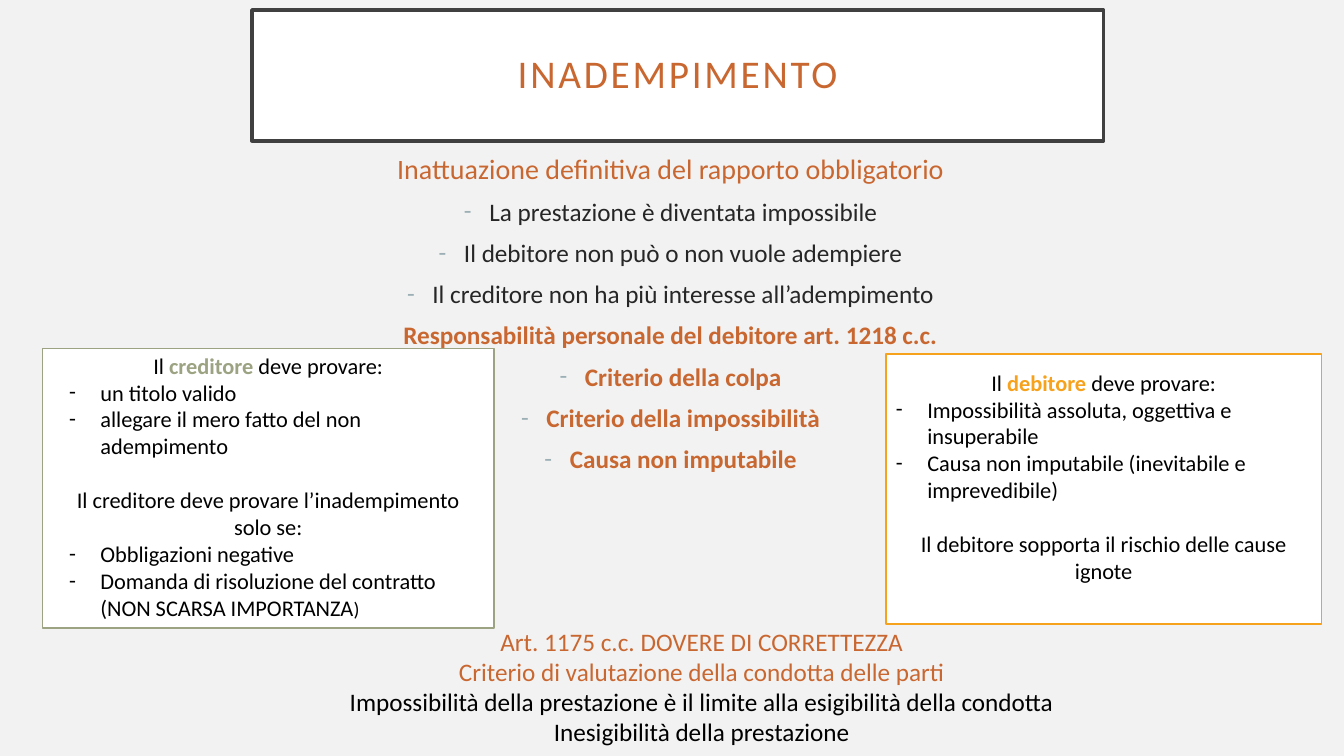
import lxml.etree
import pptx
import pptx.dml.color
import pptx.enum.shapes
import pptx.enum.text
import pptx.oxml.ns
import pptx.util

Cm = pptx.util.Cm
Pt = pptx.util.Pt
ALIGN = pptx.enum.text.PP_ALIGN

COLOURS = {
    "page": "F2F2F2", "white": "FFFFFF", "black": "000000", "frame": "404040",
    "rust": "C96731", "text": "262626", "dash": "9BAFB5",
    "creditor": "9CA383", "debtor": "F6A21D",
}
BODY_SPACING = {"line_spacing": 0.9, "space_before": Pt(10)}
CARD_SIZE = 16
BLANK_LINE = Pt(19.5)


def colour(name):
    """Return the named colour."""
    return pptx.dml.color.RGBColor.from_string(COLOURS[name])


def apply_formats(target, formats):
    """Set every attribute of the target from a dict."""
    for name, value in formats.items():
        setattr(target, name, value)


def place(shape, box):
    """Move and size a shape to a box in centimetres."""
    apply_formats(shape, dict(zip(("left", "top", "width", "height"), map(Cm, box))))


def paint(shape, fill, line, width):
    """Give a shape a solid fill and outline."""
    shape.fill.solid()
    shape.fill.fore_color.rgb = colour(fill)
    shape.line.color.rgb = colour(line)
    shape.line.width = Pt(width)


def prepare_frame(shape, anchor=pptx.enum.text.MSO_ANCHOR.TOP):
    """Return the wrapping text frame of a shape."""
    frame = shape.text_frame
    apply_formats(frame, {
        "word_wrap": True,
        "auto_size": pptx.enum.text.MSO_AUTO_SIZE.NONE,
        "vertical_anchor": anchor,
    })
    return frame


def set_bullet(para, indent, dash_colour):
    """Give a paragraph a hanging dash, or no bullet when the indent is zero."""
    properties = para._p.get_or_add_pPr()
    properties.set("marL", str(Cm(indent)))
    properties.set("indent", str(-Cm(indent)))
    tag = pptx.oxml.ns.qn
    if not indent:
        lxml.etree.SubElement(properties, tag("a:buNone"))
        return
    dash = lxml.etree.SubElement(properties, tag("a:buClr"))
    lxml.etree.SubElement(dash, tag("a:srgbClr"), val=COLOURS[dash_colour])
    lxml.etree.SubElement(properties, tag("a:buFont"), typeface="Calibri")
    lxml.etree.SubElement(properties, tag("a:buChar"), char="-")


def add_span(para, text, size, tint, bold=False):
    """Add one formatted run to a paragraph."""
    span = para.add_run()
    span.text = text
    apply_formats(span.font, {"name": "Calibri", "size": Pt(size), "bold": bold})
    span.font.color.rgb = colour(tint)
    return span


def add_para(frame, spans, formats, indent=0, dash_colour="black"):
    """Write a paragraph of spans into a frame."""
    first = frame.paragraphs[0]
    para = frame.add_paragraph() if first.runs else first
    apply_formats(para, formats)
    set_bullet(para, indent, dash_colour)
    for span in spans:
        add_span(para, *span)


def build_title(page, box):
    """Place the framed title."""
    title = page.shapes.title
    place(title, box)
    paint(title, "white", "frame", 2.5)
    frame = prepare_frame(title, pptx.enum.text.MSO_ANCHOR.MIDDLE)
    sides = ("left", "top", "right", "bottom")
    apply_formats(frame, {f"margin_{side}": Cm(0.5) for side in sides})
    para = frame.paragraphs[0]
    apply_formats(para, {"alignment": ALIGN.CENTER, "line_spacing": 0.9})
    span = add_span(para, "INADEMPIMENTO", 28, "rust")
    span.font._element.set("spc", "200")


def build_body(page, box):
    """Place the central list of cases and criteria."""
    body = page.placeholders[1]
    place(body, box)
    frame = prepare_frame(body)
    formats = {"alignment": ALIGN.CENTER, **BODY_SPACING}
    sections = [
        ("Inattuazione definitiva del rapporto obbligatorio", 20, False, "text", [
            "La prestazione è diventata impossibile",
            "Il debitore non può o non vuole adempiere",
            "Il creditore non ha più interesse all’adempimento",
        ]),
        ("Responsabilità personale del debitore art. 1218 c.c.", 18, True, "rust", [
            "Criterio della colpa",
            "Criterio della impossibilità",
            "Causa non imputabile",
        ]),
    ]
    for heading, size, bold, tint, items in sections:
        add_para(frame, [(heading, size, "rust", bold)], formats)
        for item in items:
            add_para(frame, [(item, 18, tint, bold)], formats, 0.64, "dash")


def build_closing(page, box):
    """Place the closing lines on fairness."""
    frame = prepare_frame(page.shapes.add_textbox(*map(Cm, box)))
    lines = [
        ("Art. 1175 c.c. DOVERE DI CORRETTEZZA", "rust"),
        ("Criterio di valutazione della condotta delle parti", "rust"),
        ("Impossibilità della prestazione è il limite alla esigibilità della condotta", "black"),
        ("Inesigibilità della prestazione", "black"),
    ]
    for text, tint in lines:
        add_para(frame, [(text, 18, tint)], {"alignment": ALIGN.CENTER})


def build_card(page, box, inset, party, proofs, remark, cases=()):
    """Place a framed card with what one party must prove."""
    left, top, width, height = box
    side, rise = inset
    card = page.shapes.add_shape(pptx.enum.shapes.MSO_SHAPE.RECTANGLE, *map(Cm, box))
    card.shadow.inherit = False
    paint(card, "white", party, 1)
    text_box = (left + side, top + rise, width - 2 * side, height - rise)
    frame = prepare_frame(page.shapes.add_textbox(*map(Cm, text_box)))
    names = {"creditor": "creditore", "debtor": "debitore"}
    heading = [("Il ", CARD_SIZE, "black"), (names[party], CARD_SIZE, party, True),
               (" deve provare:", CARD_SIZE, "black")]
    centred = {"alignment": ALIGN.CENTER}
    add_para(frame, heading, centred)
    for proof in proofs:
        add_para(frame, [(proof, CARD_SIZE, "black")], {"alignment": ALIGN.LEFT}, 0.79)
    add_para(frame, [(remark, CARD_SIZE, "black")], {**centred, "space_before": BLANK_LINE})
    for spans in cases:
        add_para(frame, spans, {"alignment": ALIGN.LEFT}, 0.79)


def main():
    """Build and save the deck."""
    deck = pptx.Presentation()
    deck.slide_width, deck.slide_height = Cm(33.87), Cm(19.05)
    page = deck.slides.add_slide(deck.slide_layouts[1])
    page.background.fill.solid()
    page.background.fill.fore_color.rgb = colour("page")
    build_title(page, (6.35, 0.25, 21.46, 3.3))
    build_body(page, (6.17, 3.78, 21.46, 8.61))
    build_closing(page, (7.98, 15.65, 19.41, 3.33))
    build_card(
        page, (1.07, 8.79, 11.38, 7.04), (0.42, -0.05), "creditor",
        ["un titolo valido", "allegare il mero fatto del non adempimento"],
        "Il creditore deve provare l’inadempimento solo se:",
        [[("Obbligazioni negative", CARD_SIZE, "black")],
         [("Domanda di risoluzione del contratto (NON SCARSA IMPORTANZA", CARD_SIZE, "black"),
          (")", 14, "black")]],
    )
    build_card(
        page, (22.33, 8.92, 10.97, 6.81), (0, 0.25), "debtor",
        ["Impossibilità assoluta, oggettiva e insuperabile",
         "Causa non imputabile (inevitabile e imprevedibile)"],
        "Il debitore sopporta il rischio delle cause ignote",
    )
    deck.save("out.pptx")


if __name__ == "__main__":
    main()
